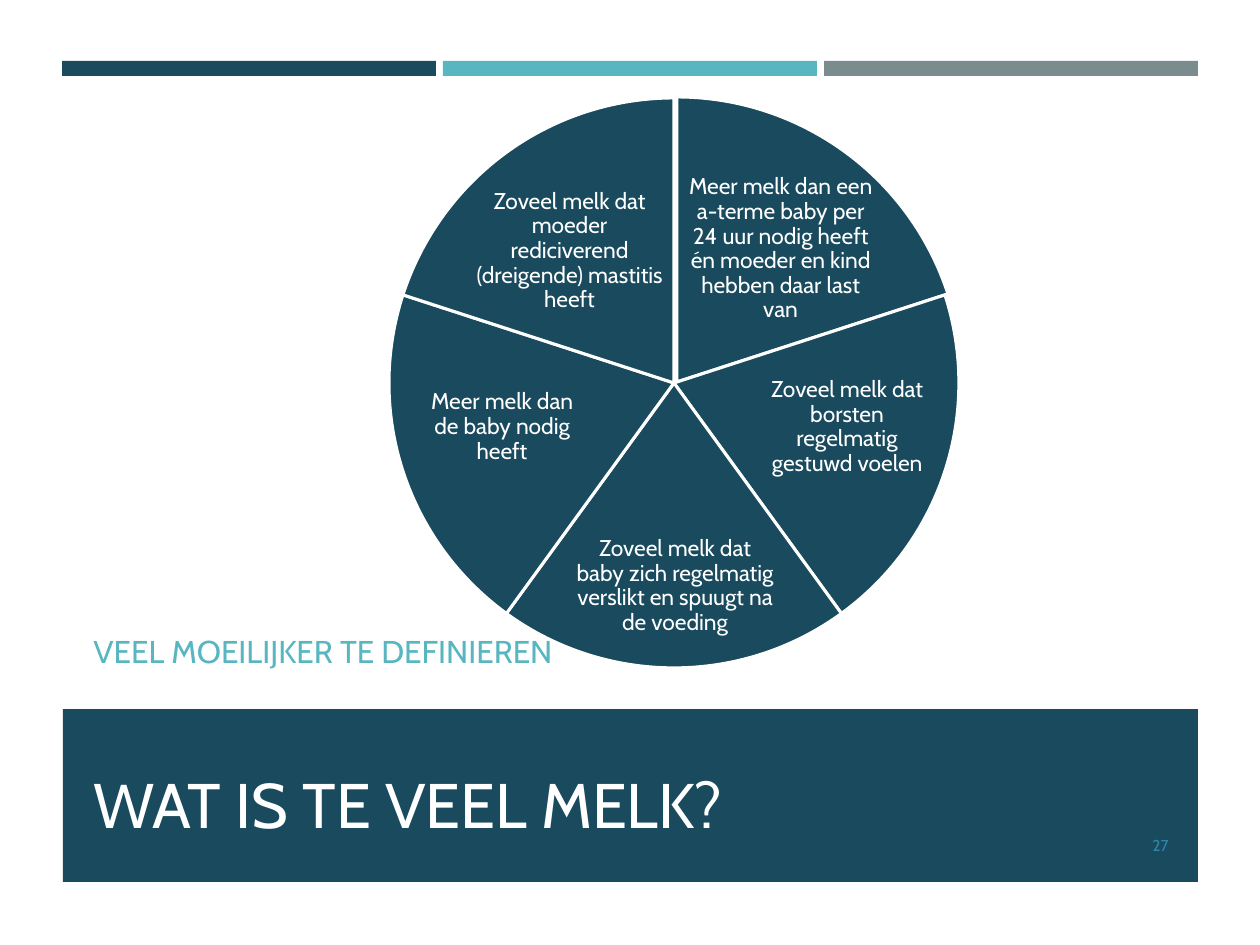
from typing import NamedTuple

from pptx import Presentation
from pptx.dml.color import RGBColor
from pptx.enum.shapes import MSO_SHAPE
from pptx.enum.text import MSO_ANCHOR, MSO_AUTO_SIZE, PP_ALIGN
from pptx.util import Emu, Pt

RECTANGLE, PIE = MSO_SHAPE.RECTANGLE, MSO_SHAPE.PIE
TOP, MIDDLE, BOTTOM = MSO_ANCHOR.TOP, MSO_ANCHOR.MIDDLE, MSO_ANCHOR.BOTTOM
LEFT, CENTER, RIGHT = PP_ALIGN.LEFT, PP_ALIGN.CENTER, PP_ALIGN.RIGHT
NO_AUTOFIT = MSO_AUTO_SIZE.NONE

PX_PER_INCH = 126
FONT = "Cabin"
COLORS = {
    "navy": "194A5D",
    "teal": "58B6C0",
    "gray": "7A8C8E",
    "blue": "2E87AA",
    "white": "FFFFFF",
}


class Area(NamedTuple):
    left: int
    top: int
    width: int
    height: int


class Slice(NamedTuple):
    text: str
    pie: Area
    label: Area


PIE_AREA = Area(389, 98, 570, 570)
FIRST_PIE_AREA = Area(392, 97, 570, 570)  # first slice stands slightly apart
SLICES = [
    Slice("Meer melk dan een a-terme baby per 24 uur nodig heeft én moeder en kind "
          "hebben daar last van", FIRST_PIE_AREA, Area(684, 183, 193, 132)),
    Slice("Zoveel melk dat borsten regelmatig gestuwd voelen",
          PIE_AREA, Area(762, 355, 170, 144)),
    Slice("Zoveel melk dat baby zich regelmatig verslikt en spuugt na de voeding",
          PIE_AREA, Area(573, 525, 204, 122)),
    Slice("Meer melk dan de baby nodig heeft",
          PIE_AREA, Area(417, 355, 170, 144)),
    Slice("Zoveel melk dat moeder rediciverend (dreigende) mastitis heeft",
          PIE_AREA, Area(473, 185, 193, 132)),
]


def px(length: int) -> Emu:
    return Emu(round(length * 914400 / PX_PER_INCH))


def color(name: str) -> RGBColor:
    return RGBColor.from_string(COLORS[name])


def add_filled(page, kind, area: Area, fill: str, line: str | None = None):
    shape = page.shapes.add_shape(kind, *map(px, area))
    shape.shadow.inherit = False
    shape.fill.solid()
    shape.fill.fore_color.rgb = color(fill)
    if line:
        shape.line.color.rgb = color(line)
        shape.line.width = Pt(1.75)
    else:
        shape.line.fill.background()
    return shape


def write(box, text: str, *, size: int, ink: str, align=LEFT, anchor=TOP,
          inset: int | None = None, spacing: float = 1.0) -> None:
    frame = box.text_frame
    frame.word_wrap = True
    frame.auto_size = NO_AUTOFIT
    frame.vertical_anchor = anchor
    if inset is not None:
        frame.margin_left = frame.margin_right = px(inset)
        frame.margin_top = frame.margin_bottom = px(inset)
    para = frame.paragraphs[0]
    para.alignment = align
    para.line_spacing = spacing
    span = para.add_run()
    span.text = text
    span.font.name = FONT
    span.font.size = Pt(size)
    span.font.color.rgb = color(ink)


def add_text(page, area: Area, text: str, **style) -> None:
    write(page.shapes.add_textbox(*map(px, area)), text, **style)


def place_title(page, area: Area, text: str, **style) -> None:
    title = page.shapes.title
    title.left, title.top, title.width, title.height = map(px, area)
    write(title, text, **style)
    # Bring the title in front of the banner
    title.element.getparent().append(title.element)


def add_slices(page) -> None:
    sweep = 360 / len(SLICES)
    for index, item in enumerate(SLICES):
        wedge = add_filled(page, PIE, item.pie, "navy", line="white")
        for edge in (0, 1):
            angle = (270 + (index + edge) * sweep) % 360
            wedge.adjustments[edge] = angle * 0.6  # 60000 units per degree
        add_text(page, item.label, item.text, size=13, ink="white",
                 align=CENTER, anchor=MIDDLE, inset=3, spacing=0.9)


def main() -> None:
    deck = Presentation()
    deck.slide_width, deck.slide_height = px(1260), px(945)
    page = deck.slides.add_slide(deck.slide_layouts[5])

    # Top bars and title banner
    for index, fill in enumerate(("navy", "teal", "gray")):
        add_filled(page, RECTANGLE, Area(62 + 381 * index, 61, 374, 15), fill)
    add_filled(page, RECTANGLE, Area(63, 709, 1135, 173), "navy")

    # Title, subtitle and page number
    place_title(page, Area(81, 639, 1101, 208), "WAT IS TE VEEL MELK?",
                size=36, ink="white", anchor=BOTTOM)
    add_text(page, Area(81, 626, 1101, 83), "VEEL MOEILIJKER TE DEFINIEREN",
             size=18, ink="teal")
    add_text(page, Area(1075, 820, 106, 51), "27", size=9, ink="blue",
             align=RIGHT, anchor=MIDDLE)

    # Pie diagram
    add_slices(page)

    deck.save("out.pptx")


if __name__ == "__main__":
    main()
